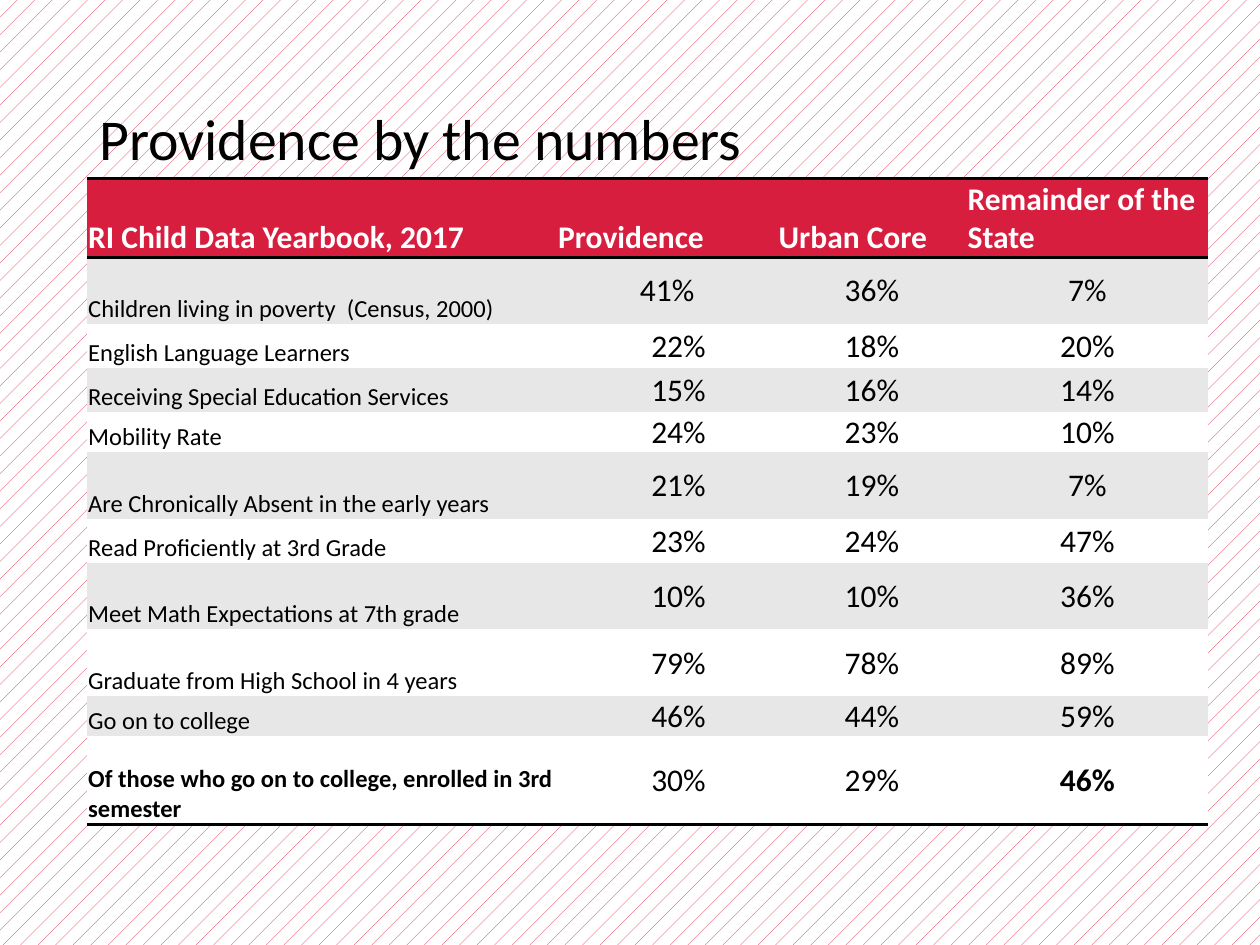
from lxml import etree
from pptx import Presentation
from pptx.dml.color import RGBColor
from pptx.enum.dml import MSO_PATTERN
from pptx.enum.text import MSO_ANCHOR, MSO_AUTO_SIZE, PP_ALIGN
from pptx.oxml.ns import qn
from pptx.util import Inches, Pt

LEFT, CENTER = PP_ALIGN.LEFT, PP_ALIGN.CENTER
MIDDLE, BOTTOM = MSO_ANCHOR.MIDDLE, MSO_ANCHOR.BOTTOM
DOTTED = MSO_PATTERN.PERCENT_5
NO_AUTOFIT = MSO_AUTO_SIZE.NONE

FONT = "Calibri"
COLORS = {"red": "D71E3E", "white": "FFFFFF", "black": "000000", "band": "E7E7E7"}
PLAIN_TABLE_STYLE = "{2D5ABB26-0587-4C30-8999-92F81FD0307C}"

COLUMN_WIDTHS = [3.73, 1.75, 1.5, 1.92]
ROW_HEIGHTS = [0.35, 0.53, 0.35, 0.35, 0.3, 0.53, 0.35, 0.53, 0.53, 0.3, 0.7]
ROWS = [
    ("RI Child Data Yearbook, 2017", "Providence", "Urban Core", "Remainder of the State"),
    ("Children living in poverty  (Census, 2000)", "41%", "36%", "7%"),
    ("English Language Learners", "22%", "18%", "20%"),
    ("Receiving Special Education Services", "15%", "16%", "14%"),
    ("Mobility Rate", "24%", "23%", "10%"),
    ("Are Chronically Absent in the early years", "21%", "19%", "7%"),
    ("Read Proficiently at 3rd Grade", "23%", "24%", "47%"),
    ("Meet Math Expectations at 7th grade", "10%", "10%", "36%"),
    ("Graduate from High School in 4 years", "79%", "78%", "89%"),
    ("Go on to college", "46%", "44%", "59%"),
    ("Of those who go on to college, enrolled in 3rd semester", "30%", "29%", "46%"),
]
LAST_ROW = len(ROWS) - 1
LAST_COLUMN = len(COLUMN_WIDTHS) - 1


def color(name):
    return RGBColor.from_string(COLORS[name])


def format_paragraph(paragraph, size, color_name, bold=False, alignment=LEFT):
    paragraph.alignment = alignment
    paragraph.font.name = FONT
    paragraph.font.size = Pt(size)
    paragraph.font.bold = bold
    paragraph.font.color.rgb = color(color_name)


def set_background(slide):
    fill = slide.background.fill
    fill.patterned()
    fill.pattern = DOTTED
    fill.fore_color.rgb = color("red")
    fill.back_color.rgb = color("white")


def place_title(slide, left, top, width, height):
    title = slide.shapes.title
    title.left, title.top = Inches(left), Inches(top)
    title.width, title.height = Inches(width), Inches(height)
    frame = title.text_frame
    frame.text = "Providence by the numbers"
    frame.vertical_anchor = MIDDLE
    frame.auto_size = NO_AUTOFIT
    frame.word_wrap = True
    paragraph = frame.paragraphs[0]
    paragraph.line_spacing = 0.9
    format_paragraph(paragraph, 33, "black")


def add_borders(cell, sides):
    properties = cell._tc.get_or_add_tcPr()
    for position, side in enumerate(sides):
        line = etree.Element(qn(f"a:ln{side}"), w=str(Pt(2)))
        fill = etree.SubElement(line, qn("a:solidFill"))
        etree.SubElement(fill, qn("a:srgbClr"), val=COLORS["black"])
        properties.insert(position, line)


def fill_cell(cell, text, row, column):
    is_header, is_label = row == 0, column == 0
    cell.text = text
    cell.margin_left = Inches(0.19 if column == 1 and row > 1 else 0.01)
    cell.margin_right = cell.margin_top = Inches(0.01)
    cell.margin_bottom = 0
    cell.vertical_anchor = BOTTOM if is_header or is_label else MIDDLE
    cell.fill.solid()
    cell.fill.fore_color.rgb = color("red" if is_header else "band" if row % 2 else "white")
    format_paragraph(
        cell.text_frame.paragraphs[0],
        size=14 if is_label and not is_header else 18,
        color_name="white" if is_header else "black",
        bold=is_header or (row == LAST_ROW and column in (0, LAST_COLUMN)),
        alignment=LEFT if is_header or is_label else CENTER,
    )
    if is_header:
        add_borders(cell, "TB")
    elif row == LAST_ROW:
        add_borders(cell, "B")


def add_numbers_table(slide, left, top, width, height):
    frame = slide.shapes.add_table(
        len(ROWS), len(COLUMN_WIDTHS),
        Inches(left), Inches(top), Inches(width), Inches(height),
    )
    table = frame.table
    table.first_row = table.horz_banding = False
    table._tbl.tblPr.find(qn("a:tableStyleId")).text = PLAIN_TABLE_STYLE
    for column, column_width in zip(table.columns, COLUMN_WIDTHS):
        column.width = Inches(column_width)
    for row, row_height in zip(table.rows, ROW_HEIGHTS):
        row.height = Inches(row_height)
    for row, texts in enumerate(ROWS):
        for column, text in enumerate(texts):
            fill_cell(table.cell(row, column), text, row, column)


def main():
    presentation = Presentation()
    presentation.slide_width, presentation.slide_height = Inches(10), Inches(7.5)
    slide = presentation.slides.add_slide(presentation.slide_layouts[5])
    set_background(slide)
    place_title(slide, 0.69, 0.4, 8.62, 1.45)
    add_numbers_table(slide, 0.69, 1.42, sum(COLUMN_WIDTHS), sum(ROW_HEIGHTS))
    presentation.save("out.pptx")


if __name__ == "__main__":
    main()
